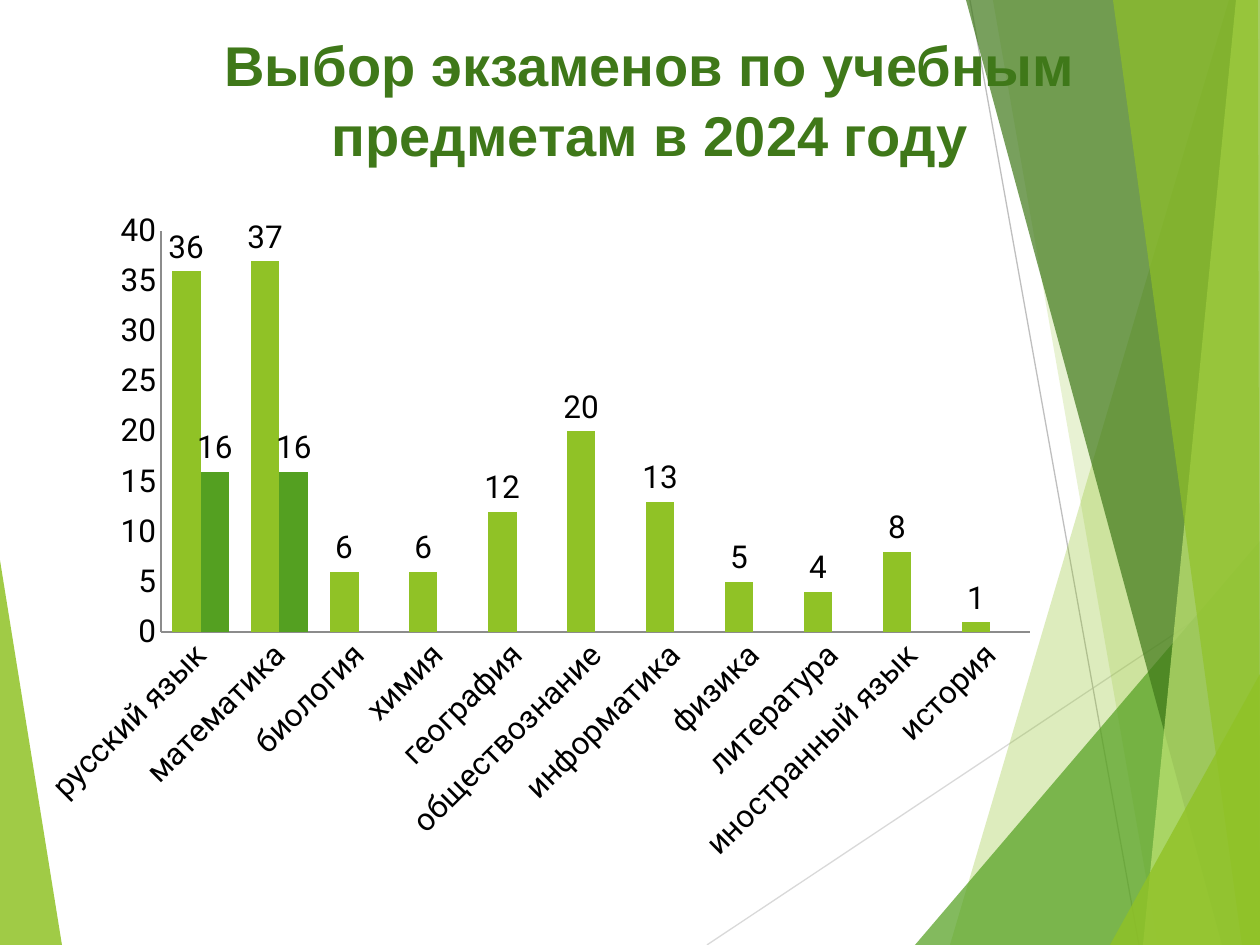
"""Builds a slide with a column chart of exam choices by school subject in 2024."""
from lxml import etree
from pptx import Presentation
from pptx.chart.data import CategoryChartData
from pptx.dml.color import RGBColor
from pptx.enum.chart import XL_CHART_TYPE as CT, XL_LABEL_POSITION as LP, XL_TICK_MARK as TM
from pptx.enum.shapes import MSO_CONNECTOR as MC
from pptx.enum.text import MSO_ANCHOR, PP_ALIGN
from pptx.oxml import parse_xml
from pptx.oxml.ns import nsdecls, qn
from pptx.util import Pt

PX = 914400 // 126
W, H = 1260, 945
C = {"lime": "90C226", "green": "54A021", "dark": "3F7819", "pale": "C0E474",
     "light_line": "D9D9D9", "line": "BFBFBF", "axis": "8C8C8C", "text": "000000"}


def rgb(name):
    return RGBColor.from_string(C[name])


def facet(points, color, alpha):
    fb = s.shapes.build_freeform(*points[0], scale=PX)
    fb.add_line_segments(points[1:], close=True)
    sp = fb.convert_to_shape()
    sp.shadow.inherit = False
    sp.fill.solid()
    sp.fill.fore_color.rgb = rgb(color)
    sp.line.fill.background()
    clr = sp._element.spPr.find(qn("a:solidFill"))[0]
    etree.SubElement(clr, qn("a:alpha")).set("val", str(alpha * 1000))


prs = Presentation()
prs.slide_width, prs.slide_height = W * PX, H * PX
s = prs.slides.add_slide(prs.slide_layouts[6])

facet([(0, 560), (62, H), (0, H)], "lime", 85)

for x1, y1, x2, y2, color in [(707, H, W, 577, "light_line"), (970, 0, 1139, H, "line")]:
    ln = s.shapes.add_connector(MC.STRAIGHT, x1 * PX, y1 * PX, x2 * PX, y2 * PX)
    ln.line.color.rgb = rgb(color)
    ln.line.width = Pt(0.75)
    etree.SubElement(ln._element.spPr, qn("a:effectLst"))

for points, color, alpha in [
    ([(1229, 0), (950, H), (W, H), (W, 0)], "lime", 30),
    ([(993, 0), (1158, H), (W, H), (W, 0)], "lime", 20),
    ([(915, H), (W, 541), (W, H)], "green", 72),
    ([(966, 0), (1222, H), (W, H), (W, 0)], "dark", 70),
    ([(1236, 0), (1143, H), (W, H), (W, 0)], "pale", 70),
    ([(1113, 0), (1242, H), (W, H), (1258, 0)], "lime", 65),
    ([(1110, H), (W, 674), (W, H)], "lime", 80),
]:
    facet(points, color, alpha)

tb = s.shapes.add_textbox(176 * PX, 22 * PX, 948 * PX, 81 * PX)
tf = tb.text_frame
tf.word_wrap = True
tf.vertical_anchor = MSO_ANCHOR.TOP
p = tf.paragraphs[0]
p.text = "Выбор экзаменов по учебным предметам в 2024 году"
p.alignment = PP_ALIGN.CENTER
p.line_spacing = 1.04
p.font.name, p.font.size, p.font.bold = "Arial", Pt(32), True
p.font.color.rgb = rgb("dark")

cd = CategoryChartData()
cd.categories = ["русский язык", "математика", "биология", "химия", "география",
                 "обществознание", "информатика", "физика", "литература",
                 "иностранный язык", "история"]
cd.add_series("Series 1", [36, 37, 6, 6, 12, 20, 13, 5, 4, 8, 1])
cd.add_series("Series 2", [16, 16] + [None] * 9)
left, top, width, height = 25, 199, 1026, 677
chart = s.shapes.add_chart(CT.COLUMN_CLUSTERED, left * PX, top * PX,
                           width * PX, height * PX, cd).chart
chart.has_legend = chart.has_title = False
chart.font.name, chart.font.size = "Roboto", Pt(18)
chart.font.color.rgb = rgb("text")

for ax in (chart.category_axis, chart.value_axis):
    ax.has_major_gridlines = False
    ax.major_tick_mark = ax.minor_tick_mark = TM.NONE
    ax.format.line.color.rgb = rgb("axis")
    ax.format.line.width = Pt(1)
    font = ax.tick_labels.font
    font.name, font.size = "Roboto", Pt(18)
    font.color.rgb = rgb("text")
chart.value_axis.minimum_scale, chart.value_axis.maximum_scale = 0, 40
chart.value_axis.major_unit = 5
chart.category_axis._element.find(qn("c:txPr")).find(qn("a:bodyPr")).set("rot", "-2700000")

plot = chart.plots[0]
plot.gap_width, plot.overlap, plot.vary_by_categories = 75, 0, False
for ser, color in zip(plot.series, ("lime", "green")):
    ser.format.fill.solid()
    ser.format.fill.fore_color.rgb = rgb(color)
    dl = ser.data_labels
    dl.show_value = True
    dl.position = LP.OUTSIDE_END
    dl.font.name, dl.font.size = "Roboto", Pt(18)
    dl.font.color.rgb = rgb("text")

area = chart._chartSpace.chart.plotArea
for old in area.findall(qn("c:layout")):
    area.remove(old)
box = {"x": (161 - left) / width, "y": (231 - top) / height, "w": 869 / width, "h": 401 / height}
area.insert(0, parse_xml(
    f'<c:layout {nsdecls("c")}><c:manualLayout><c:layoutTarget val="inner"/>'
    '<c:xMode val="edge"/><c:yMode val="edge"/>'
    + "".join(f'<c:{k} val="{v:.4f}"/>' for k, v in box.items())
    + "</c:manualLayout></c:layout>"))

prs.save("out.pptx")
